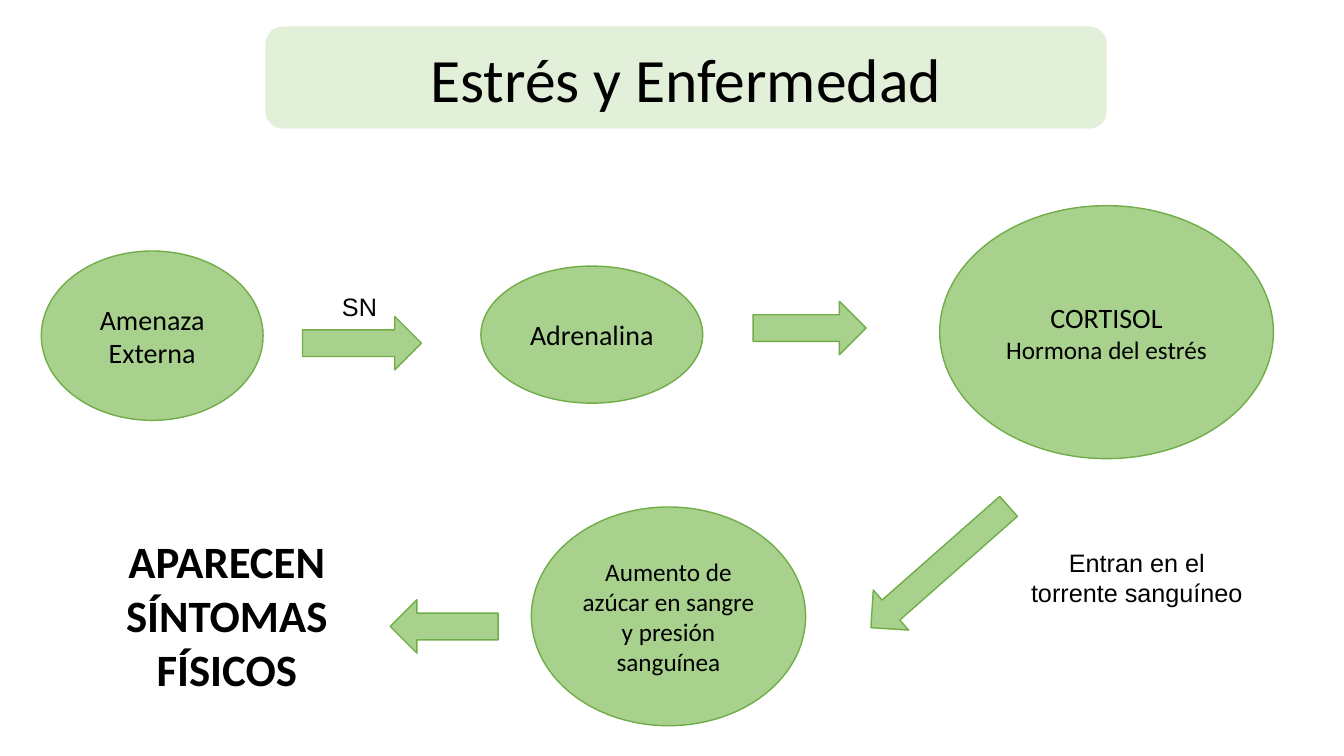
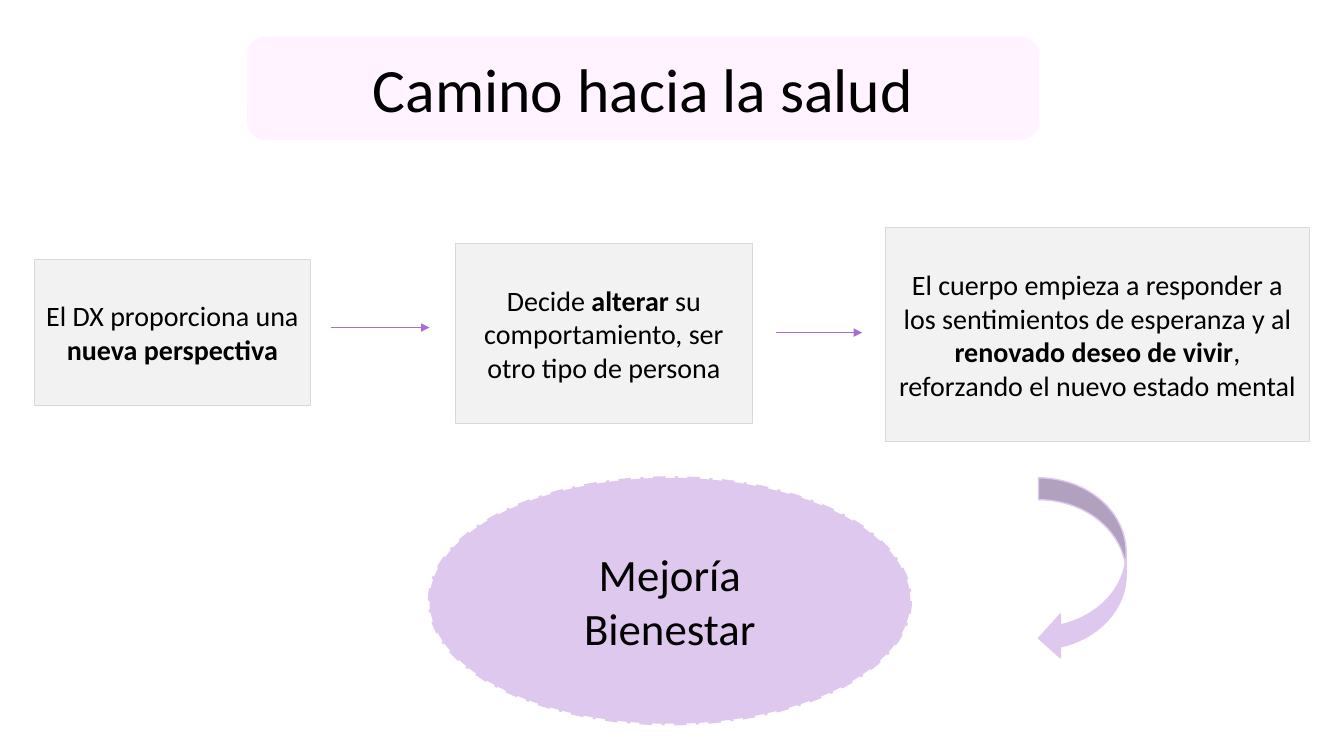
from dataclasses import dataclass

from lxml.etree import SubElement
from pptx import Presentation
from pptx.dml.color import RGBColor
from pptx.enum.dml import MSO_LINE
from pptx.enum.shapes import MSO_CONNECTOR, MSO_SHAPE
from pptx.enum.text import MSO_ANCHOR, PP_ALIGN
from pptx.oxml.ns import qn
from pptx.util import Inches, Pt


# Theme: colours, fonts and type sizes
@dataclass(frozen=True)
class Theme:
    text: str = "000000"
    green: str = "A9D18E"
    green_line: str = "70AD47"
    green_band: str = "E2F0D9"
    lilac: str = "DEC8EE"
    lilac_line: str = "A86ED4"
    lilac_band: str = "FFF3FF"
    gray: str = "F2F2F2"
    gray_line: str = "D9D9D9"
    font: str = "Calibri"
    label_font: str = "Arial"
    title: int = 44
    result: int = 32
    body: int = 20
    small: int = 18


T = Theme()

# Content: boxes are (left, top, width, height); each line is (text, size),
# with ** around bold words
STRESS_TITLE = ("Estrés y Enfermedad", (2.64, 0.27, 8.33, 1), T.green_band)
STRESS_STEPS = [
    ((0.41, 2.49, 2.2, 1.68), [("Amenaza", T.body), ("Externa", T.body)]),
    ((4.77, 2.64, 2.2, 1.36), [("Adrenalina", T.body)]),
    ((9.32, 2.04, 3.31, 2.51),
     [("CORTISOL", T.body), ("Hormona del estrés", T.small)]),
    ((5.27, 5.03, 2.72, 2.17),
     [("Aumento de azúcar en sangre y presión sanguínea", T.small)]),
]
STRESS_ARROWS = [  # box, rotation
    ((3, 3.14, 1.18, 0.53), 0),
    ((7.47, 2.99, 1.12, 0.53), 0),
    ((8.41, 5.36, 1.82, 0.53), 138.6),
    ((3.87, 5.95, 1.07, 0.53), 180),
]
STRESS_LABELS = [  # box, lines, font, wrap
    ((3.29, 2.84, 0.55, 0.4), [("SN", T.small)], T.label_font, False),
    ((10.08, 5.38, 2.39, 0.71),
     [("Entran en el torrente sanguíneo", T.small)], T.label_font, True),
    ((0.99, 5.25, 2.52, 1.72),
     [("**APARECEN SÍNTOMAS**", T.result), ("**FÍSICOS**", T.result)],
     T.font, True),
]

HEALTH_TITLE = ("Camino hacia la salud", (2.46, 0.37, 7.84, 1.01), T.lilac_band)
HEALTH_STEPS = [
    ((0.34, 2.57, 2.74, 1.45),
     "El DX proporciona una **nueva perspectiva**"),
    ((4.52, 2.42, 2.94, 1.78),
     "Decide **alterar** su comportamiento, ser otro tipo de persona"),
    ((8.78, 2.26, 4.21, 2.12),
     "El cuerpo empieza a responder a los sentimientos de esperanza y al "
     "**renovado deseo de vivir**, reforzando el nuevo estado mental"),
]
HEALTH_ARROWS = [(3.28, 4.26, 3.25), (7.7, 8.55, 3.3)]  # start x, end x, y
HEALTH_RESULT = ((4.26, 4.74, 4.77, 2.44),
                 [("Mejoría", T.result), ("Bienestar", T.result)])
HEALTH_TURN = (10.3, 4.74, 0.87, 1.81)


# Helpers
def rgb(value):
    return RGBColor.from_string(value)


def set_attrs(obj, values):
    for name, value in values.items():
        setattr(obj, name, value)


def write(sp, lines, font=T.font, anchor=MSO_ANCHOR.MIDDLE, wrap=True):
    tf = sp.text_frame
    set_attrs(tf, {"word_wrap": wrap, "vertical_anchor": anchor})
    for i, (text, size) in enumerate(lines):
        p = tf.add_paragraph() if i else tf.paragraphs[0]
        p.alignment = PP_ALIGN.CENTER
        for j, part in enumerate(text.split("**")):
            if part:
                r = p.add_run()
                r.text = part
                set_attrs(r.font, {"name": font, "size": Pt(size),
                                   "bold": j % 2 == 1})
                r.font.color.rgb = rgb(T.text)


def add_box(s, kind, box, fill, line, lines=(), width=1, dash=None, rotation=0):
    sp = s.shapes.add_shape(kind, *map(Inches, box))
    sp.shadow.inherit = False
    sp.rotation = rotation
    sp.fill.solid()
    sp.fill.fore_color.rgb = rgb(fill)
    sp.line.color.rgb = rgb(line)
    set_attrs(sp.line, {"width": Pt(width), "dash_style": dash})
    write(sp, lines)
    return sp


def add_title(s, text, box, color):
    add_box(s, MSO_SHAPE.ROUNDED_RECTANGLE, box, color, color, [(text, T.title)])


def add_label(s, box, lines, font, wrap):
    tb = s.shapes.add_textbox(*map(Inches, box))
    write(tb, lines, font, MSO_ANCHOR.TOP, wrap)


def add_arrow(s, x1, x2, y):
    cn = s.shapes.add_connector(MSO_CONNECTOR.STRAIGHT,
                                *map(Inches, (x1, y, x2, y)))
    cn.line.color.rgb = rgb(T.lilac_line)
    cn.line.width = Pt(0.5)
    ln = cn.line._get_or_add_ln()
    SubElement(ln, qn("a:tailEnd"), type="triangle")
    SubElement(cn._element.spPr, qn("a:effectLst"))


# Slides
def build_stress(s):
    for box, lines in STRESS_STEPS:
        add_box(s, MSO_SHAPE.OVAL, box, T.green, T.green_line, lines)
    for box, rotation in STRESS_ARROWS:
        add_box(s, MSO_SHAPE.RIGHT_ARROW, box, T.green, T.green_line,
                rotation=rotation)
    for label in STRESS_LABELS:
        add_label(s, *label)
    add_title(s, *STRESS_TITLE)


def build_health(s):
    add_title(s, *HEALTH_TITLE)
    for box, text in HEALTH_STEPS:
        add_box(s, MSO_SHAPE.RECTANGLE, box, T.gray, T.gray_line,
                [(text, T.body)], width=0.75)
    box, lines = HEALTH_RESULT
    add_box(s, MSO_SHAPE.OVAL, box, T.lilac, T.lilac, lines, width=2.25,
            dash=MSO_LINE.DASH_DOT)
    for arrow in HEALTH_ARROWS:
        add_arrow(s, *arrow)
    add_box(s, MSO_SHAPE.CURVED_LEFT_ARROW, HEALTH_TURN, T.lilac, T.lilac)


def main():
    prs = Presentation()
    set_attrs(prs, {"slide_width": Inches(13.33), "slide_height": Inches(7.5)})
    for build in (build_stress, build_health):
        build(prs.slides.add_slide(prs.slide_layouts[6]))
    prs.save("out.pptx")


if __name__ == "__main__":
    main()
